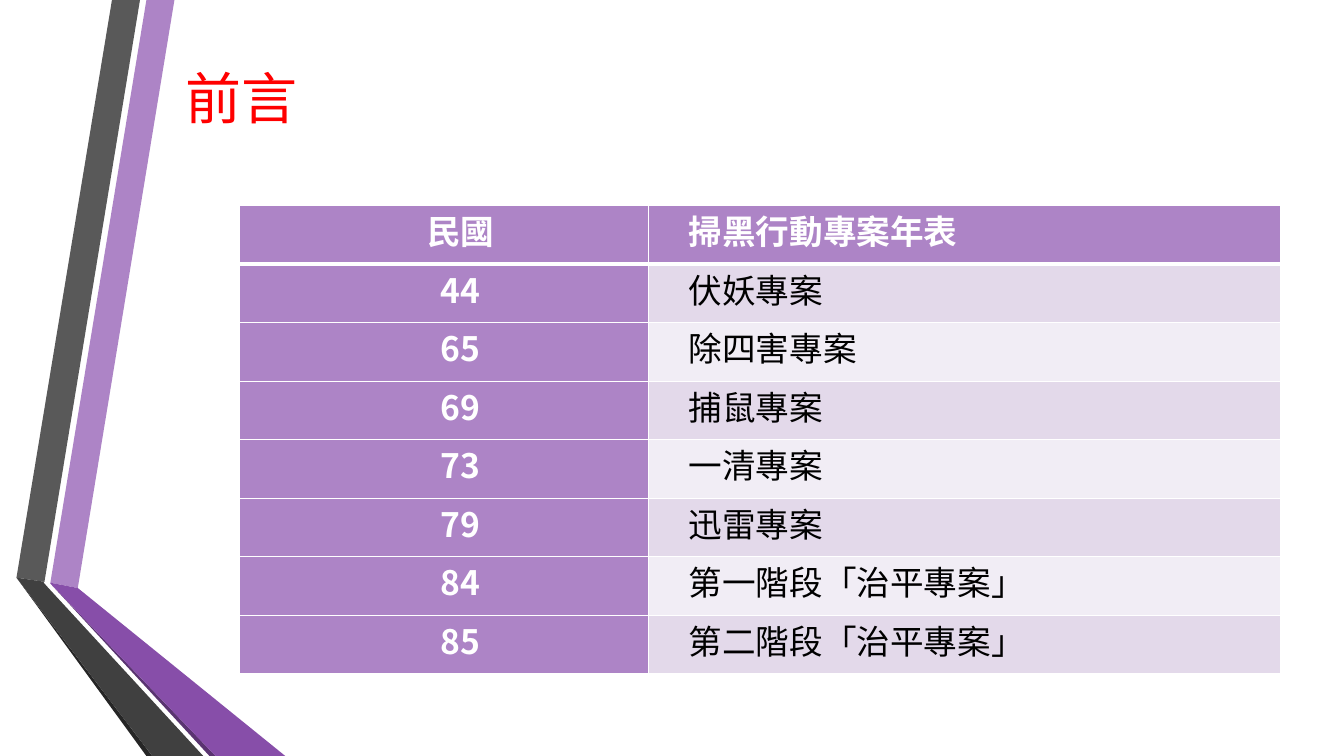
from lxml import etree
from pptx import Presentation
from pptx.dml.color import RGBColor
from pptx.enum import text
from pptx.oxml import ns
from pptx.util import Pt

FONT = "Noto Sans CJK SC"
COLORS = {
    "lilac": "AD84C6", "purple": "874EA9", "plum": "5A3471",
    "grey": "595959", "charcoal": "404040", "ink": "262626",
    "odd_row": "E3D9EA", "even_row": "F1EDF5",
    "white": "FFFFFF", "black": "000000", "red": "FF0000",
}
RIBBONS = [
    ("lilac", [(36, 416.2), (55.6, 420), (124.6, 0), (104.6, 0)]),
    ("grey", [(100, 0), (80, 0), (11.8, 412.6), (31.8, 415.6)]),
    ("ink", [(11.8, 412.6), (104.6, 540), (108.8, 540)]),
    ("plum", [(36, 416.8), (149.6, 540), (154, 540)]),
    ("purple", [(36, 416.8), (154, 540), (203.8, 540), (55.6, 420), (36, 416.2)]),
    ("charcoal", [(145.2, 540), (34.4, 419.8), (31.2, 416.2), (31.8, 415.6),
                  (11.8, 412.6), (108.8, 540)]),
]
HEADER = ("民國", "掃黑行動專案年表")
CAMPAIGNS = [
    ("44", "伏妖專案"),
    ("65", "除四害專案"),
    ("69", "捕鼠專案"),
    ("73", "一清專案"),
    ("79", "迅雷專案"),
    ("84", "第一階段「治平專案」"),
    ("85", "第二階段「治平專案」"),
]
COLUMN_WIDTHS = (292, 451.4)
ROW_HEIGHT = 41.8


def rgb(name):
    return RGBColor.from_string(COLORS[name])


def add_ribbon(slide, color, points):
    builder = slide.shapes.build_freeform(Pt(points[0][0]), Pt(points[0][1]))
    builder.add_line_segments([(Pt(x), Pt(y)) for x, y in points[1:]], close=True)
    ribbon = builder.convert_to_shape()
    ribbon.shadow.inherit = False
    ribbon.fill.solid()
    ribbon.fill.fore_color.rgb = rgb(color)
    ribbon.line.fill.background()


def style_paragraph(paragraph, size, color, bold=False):
    """Set the font for Latin and East Asian characters alike."""
    font = paragraph.font
    font.size = Pt(size)
    font.bold = bold
    font.color.rgb = rgb(color)
    font.name = FONT
    properties = paragraph._p.pPr.find(ns.qn("a:defRPr"))
    etree.SubElement(properties, ns.qn("a:ea"), typeface=FONT)


def add_title(slide, wording):
    title = slide.shapes.add_textbox(Pt(125.3), Pt(0), Pt(789), Pt(138.2))
    frame = title.text_frame
    frame.word_wrap = True
    frame.vertical_anchor = text.MSO_ANCHOR.MIDDLE
    frame.text = wording
    style_paragraph(frame.paragraphs[0], 40, "red")


def set_borders(cell, top, bottom):
    """Draw white borders, with top and bottom widths in points."""
    properties = cell._tc.get_or_add_tcPr()
    widths = {"lnL": 1, "lnR": 1, "lnT": top, "lnB": bottom}
    for position, (side, width) in enumerate(widths.items()):
        border = etree.Element(ns.qn(f"a:{side}"), w=str(Pt(width)))
        fill = etree.SubElement(border, ns.qn("a:solidFill"))
        etree.SubElement(fill, ns.qn("a:srgbClr"), val=COLORS["white"])
        properties.insert(position, border)


def fill_cell(cell, wording, fill, color, bold, centred):
    cell.margin_left = cell.margin_right = Pt(5)
    cell.margin_top = cell.margin_bottom = Pt(0)
    cell.fill.solid()
    cell.fill.fore_color.rgb = rgb(fill)
    cell.text = wording
    paragraph = cell.text_frame.paragraphs[0]
    paragraph.alignment = text.PP_ALIGN.CENTER if centred else text.PP_ALIGN.LEFT
    style_paragraph(paragraph, 24, color, bold)
    indent = paragraph._p.get_or_add_pPr()
    indent.set("marL", str(Pt(24)))
    indent.set("indent", "0")


def add_timeline(slide):
    rows = [HEADER] + CAMPAIGNS
    timeline = slide.shapes.add_table(
        len(rows), len(COLUMN_WIDTHS), Pt(171), Pt(147),
        Pt(sum(COLUMN_WIDTHS)), Pt(ROW_HEIGHT * len(rows))).table
    for column, width in zip(timeline.columns, COLUMN_WIDTHS):
        column.width = Pt(width)
    for r, row in enumerate(rows):
        timeline.rows[r].height = Pt(ROW_HEIGHT)
        for c, wording in enumerate(row):
            cell = timeline.cell(r, c)
            heading = r == 0 or c == 0
            band = "odd_row" if r % 2 else "even_row"
            fill_cell(cell, wording, "lilac" if heading else band,
                      "white" if heading else "black", heading, centred=c == 0)
            set_borders(cell, top=3 if r == 1 else 1, bottom=3 if r == 0 else 1)


def main():
    deck = Presentation()
    deck.slide_width, deck.slide_height = Pt(960), Pt(540)
    slide = deck.slides.add_slide(deck.slide_layouts[6])
    for color, points in RIBBONS:
        add_ribbon(slide, color, points)
    add_title(slide, "前言")
    add_timeline(slide)
    deck.save("out.pptx")


if __name__ == "__main__":
    main()
